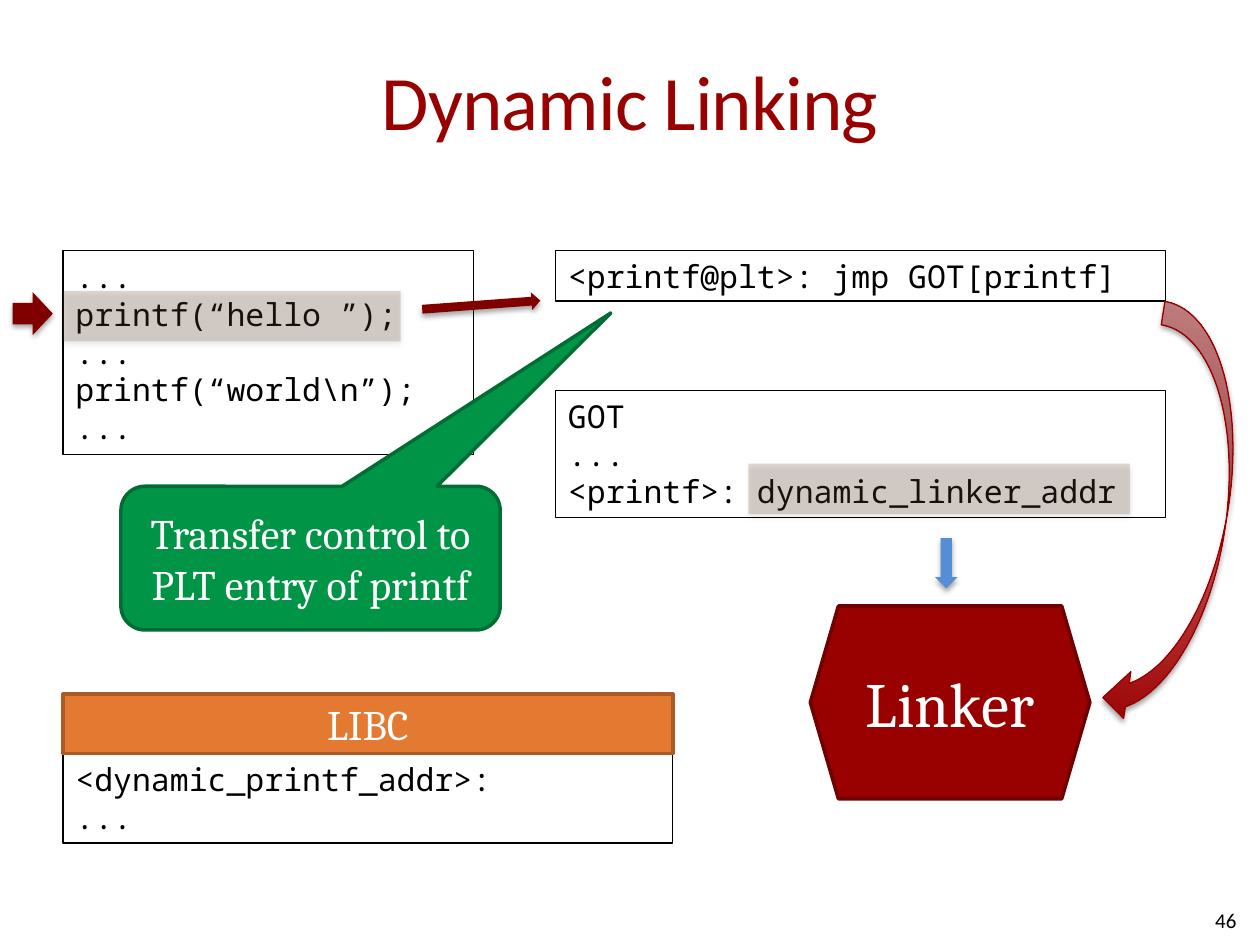
import dataclasses

import lxml.etree
import pptx
import pptx.dml.color
import pptx.enum.shapes
import pptx.enum.text
import pptx.oxml.ns
import pptx.util

Pt = pptx.util.Pt
SHAPE = pptx.enum.shapes.MSO_SHAPE
ALIGN = pptx.enum.text.PP_ALIGN
ANCHOR = pptx.enum.text.MSO_ANCHOR
FIT = pptx.enum.text.MSO_AUTO_SIZE


@dataclasses.dataclass(frozen=True)
class Theme:
    heading: str = "Calibri"
    body: str = "Cambria"
    code: str = "Noto Sans Mono"
    title_size: float = 44
    linker_size: float = 36
    label_size: float = 24
    code_size: float = 18
    number_size: float = 12
    black: str = "000000"
    white: str = "FFFFFF"
    red: str = "990000"
    red_edge: str = "710000"
    pink: str = "F19F9F"
    curve_edge: str = "960000"
    marker: str = "800000"
    green: str = "009446"
    green_edge: str = "006D34"
    orange: str = "E47932"
    orange_edge: str = "A95A25"
    blue: str = "558ED5"
    highlight: str = "6E4A31"


THEME = Theme()


def rgb(value):
    return pptx.dml.color.RGBColor.from_string(value)


def write(frame, lines, font, size, color, align=ALIGN.LEFT, **frame_format):
    """Fill a text frame with one paragraph per line."""
    for name, value in {"word_wrap": True, **frame_format}.items():
        setattr(frame, name, value)
    for index, line in enumerate(lines):
        paragraph = frame.paragraphs[0] if index == 0 else frame.add_paragraph()
        paragraph.alignment = align
        run = paragraph.add_run()
        run.text = line
        run.font.color.rgb = rgb(color)
        for name, value in {"name": font, "size": Pt(size)}.items():
            setattr(run.font, name, value)


def add_figure(slide, kind, box, fill=None, edge=None, edge_width=2, rotation=0):
    figure = slide.shapes.add_shape(kind, *map(Pt, box))
    figure.shadow.inherit = False
    figure.rotation = rotation
    if fill:
        figure.fill.solid()
        figure.fill.fore_color.rgb = rgb(fill)
    else:
        figure.fill.background()
    if edge:
        figure.line.color.rgb = rgb(edge)
        figure.line.width = Pt(edge_width)
    else:
        figure.line.fill.background()
    return figure


def add_child(parent, tag, **attributes):
    child = lxml.etree.SubElement(parent, pptx.oxml.ns.qn(tag))
    for name, value in attributes.items():
        child.set(name, str(value))
    return child


def cast_shadow(figure):
    """Soft shadow straight below the figure."""
    effects = figure.element.spPr.find(pptx.oxml.ns.qn("a:effectLst"))
    shadow = add_child(effects, "a:outerShdw", blurRad=int(Pt(3.1)), dist=int(Pt(1.8)),
                       dir=90 * 60000, rotWithShape=0)
    add_child(add_child(shadow, "a:srgbClr", val=THEME.black), "a:alpha", val=35000)


def add_arrow(slide, box, color, rotation=0):
    cast_shadow(add_figure(slide, SHAPE.RIGHT_ARROW, box, color, rotation=rotation))


def add_highlight(slide, box):
    band = add_figure(slide, SHAPE.RECTANGLE, box, THEME.highlight)
    color = band.element.spPr.find(".//" + pptx.oxml.ns.qn("a:srgbClr"))
    add_child(color, "a:alpha", val=22000)
    cast_shadow(band)


def add_code(slide, box, lines):
    listing = add_figure(slide, SHAPE.RECTANGLE, box, edge=THEME.black, edge_width=0.75)
    write(listing.text_frame, lines, THEME.code, THEME.code_size, THEME.black,
          vertical_anchor=ANCHOR.TOP, auto_size=FIT.SHAPE_TO_FIT_TEXT)


def add_label(slide, kind, box, text, fill, edge, size=THEME.label_size):
    label = add_figure(slide, kind, box, fill, edge)
    write(label.text_frame, [text], THEME.body, size, THEME.white, ALIGN.CENTER,
          vertical_anchor=ANCHOR.MIDDLE)
    return label


def place_title(slide, box):
    title = slide.shapes.title
    for name, value in zip(("left", "top", "width", "height"), box):
        setattr(title, name, Pt(value))
    write(title.text_frame, ["Dynamic Linking"], THEME.heading, THEME.title_size,
          THEME.red, ALIGN.CENTER, vertical_anchor=ANCHOR.MIDDLE,
          margin_left=0, margin_right=0)
    title.text_frame.paragraphs[0].runs[0].font._element.set("spc", "-50")


def place_program(slide, box):
    """Calling code, with the current call marked."""
    left, top, width, height = box
    add_code(slide, box, ["...", "printf(“hello ”);", "...", "printf(“world\\n”);", "..."])
    add_highlight(slide, (left, top + 23, 193, 28.8))
    add_arrow(slide, (left - 28.8, top + 23.7, 23, 24.5), THEME.marker)


def place_got(slide, box):
    """Offset table, with an arrow leading down from the address."""
    left, top, width, height = box
    add_code(slide, box, ["GOT", "...", "<printf>: dynamic_linker_addr"])
    add_highlight(slide, (left + 110.2, top + 41.8, 218.2, 28.8))
    add_arrow(slide, (left + 208.8, top + 92.2, 28.8, 13), THEME.blue, 90)


def place_transfer(slide, box):
    """Jump from the call to the PLT entry, explained by a callout."""
    left, top, width, height = box
    add_arrow(slide, (left + 172.1, top - 108.7, 67.7, 10.1), THEME.marker, 355.8)
    callout = add_label(slide, SHAPE.ROUNDED_RECTANGULAR_CALLOUT, box,
                        "Transfer control to PLT entry of printf",
                        THEME.green, THEME.green_edge)
    for index, value in enumerate((0.792, -1.707, 0.167)):
        callout.adjustments[index] = value


def place_libc(slide, box):
    left, top, width, height = box
    header = 33.9
    add_code(slide, (left, top + header, width, height - header),
             ["<dynamic_printf_addr>:", "..."])
    add_label(slide, SHAPE.RECTANGLE, (left, top, width, header), "LIBC",
              THEME.orange, THEME.orange_edge)


def place_linker(slide, box):
    """Linker, reached by a curved arrow from the PLT entry."""
    left, top, width, height = box
    linker = add_label(slide, SHAPE.HEXAGON, box, "Linker", THEME.red,
                       THEME.red_edge, THEME.linker_size)
    linker.adjustments[0] = 0.146
    curve = add_figure(slide, SHAPE.CURVED_LEFT_ARROW,
                       (left + 183.6, top - 171.3, 54, 242.6),
                       edge=THEME.curve_edge, edge_width=0.75, rotation=8.9)
    curve.fill.gradient()
    curve.fill.gradient_angle = 90
    for stop, position, color in zip(curve.fill.gradient_stops, (0, 1),
                                     (THEME.red, THEME.pink)):
        stop.position = position
        stop.color.rgb = rgb(color)
    cast_shadow(curve)


def place_number(slide, box):
    number = slide.shapes.add_textbox(*map(Pt, box))
    write(number.text_frame, ["46"], THEME.heading, THEME.number_size, THEME.black,
          ALIGN.RIGHT, vertical_anchor=ANCHOR.MIDDLE)


def main():
    deck = pptx.Presentation()
    deck.slide_width, deck.slide_height = Pt(720), Pt(540)
    slide = deck.slides.add_slide(deck.slide_layouts[5])

    left, right, top, wide = 36, 317.5, 143.3, 348.5
    place_title(slide, (left, 12.2, 648, 90))
    place_program(slide, (left, top, 234.7, 116.6))
    add_code(slide, (right, top, wide, 28.8), ["<printf@plt>: jmp GOT[printf]"])
    place_got(slide, (right, 223.2, wide, 72.7))
    place_transfer(slide, (69.1, 277.9, 216.7, 82.1))
    place_libc(slide, (left, 396.7, wide, 85))
    place_linker(slide, (463, 346.3, 159.8, 110.2))
    place_number(slide, (545.8, 511.2, 167.8, 28.8))
    deck.save("out.pptx")


if __name__ == "__main__":
    main()
